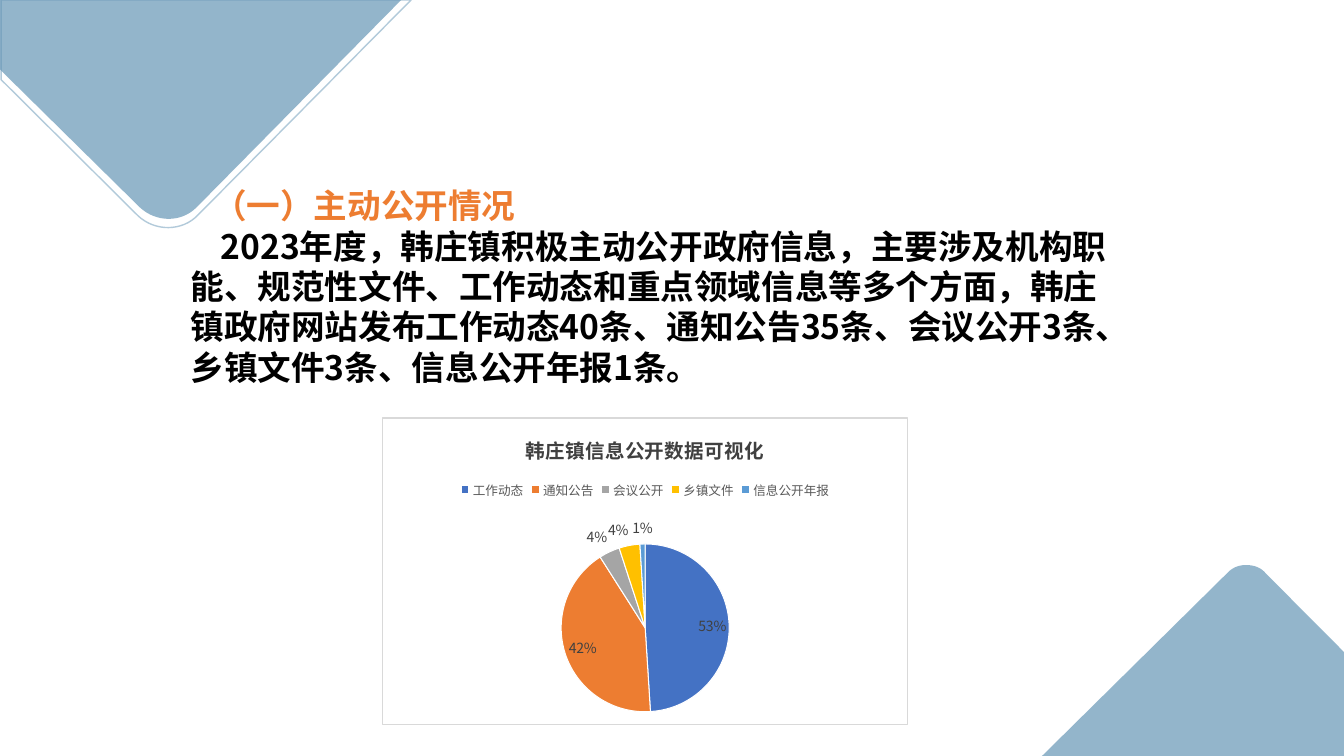
from lxml import etree
from pptx import Presentation
from pptx.chart.data import CategoryChartData
from pptx.dml.color import RGBColor
from pptx.enum.chart import XL_CHART_TYPE, XL_LABEL_POSITION, XL_LEGEND_POSITION
from pptx.oxml import parse_xml
from pptx.oxml.ns import nsdecls, qn
from pptx.util import Cm, Pt

PIE = XL_CHART_TYPE.PIE
BEST = XL_LABEL_POSITION.BEST_FIT
TOP = XL_LEGEND_POSITION.TOP

COLORS = {
    "blue": "6696B6", "orange": "ED7D31", "black": "000000",
    "white": "FFFFFF", "title": "404040", "legend": "595959",
    "border": "D9D9D9",
}
SLICES = [
    ("工作动态", 49, "4472C4"),
    ("通知公告", 42, "ED7D31"),
    ("会议公开", 4, "A5A5A5"),
    ("乡镇文件", 4, "FFC000"),
    ("信息公开年报", 1, "5B9BD5"),
]
TITLE = "韩庄镇信息公开数据可视化"
HEADING = "（一）主动公开情况"
BODY = (
    "2023年度，韩庄镇积极主动公开政府信息，主要涉及机构职能、规范性文件、"
    "工作动态和重点领域信息等多个方面，韩庄镇政府网站发布工作动态40条、"
    "通知公告35条、会议公开3条、乡镇文件3条、信息公开年报1条。"
)


def curve(a, b, c, d, steps=16):
    points = []
    for i in range(steps + 1):
        t = i / steps
        u = 1 - t
        points.append(tuple(
            u**3 * p + 3 * u * u * t * q + 3 * u * t * t * r + t**3 * s
            for p, q, r, s in zip(a, b, c, d)
        ))
    return points


class Page:
    font = "Noto Sans CJK SC"

    def __init__(self, slide):
        self.slide = slide

    def color(self, name):
        return RGBColor.from_string(COLORS[name])

    def style(self, font, size, name, bold=False):
        font.size = Pt(size)
        font.bold = bold
        font.name = self.font
        font.color.rgb = self.color(name)

    def east(self, run):
        props = run._r.get_or_add_rPr()
        latin = props.find(qn("a:latin"))
        east = etree.Element(qn("a:ea"), typeface=self.font)
        latin.addnext(east)

    def paint(self, fill, name, alpha):
        fill.solid()
        fill.fore_color.rgb = self.color(name)
        tint = fill._xPr.find(qn("a:solidFill"))[0]
        etree.SubElement(tint, qn("a:alpha"), val=str(alpha * 1000))

    def outline(self, points, alpha, filled=True):
        spots = [(Cm(x), Cm(y)) for x, y in points]
        pen = self.slide.shapes.build_freeform(*spots[0])
        pen.add_line_segments(spots[1:], close=True)
        shape = pen.convert_to_shape()
        shape.shadow.inherit = False
        if filled:
            self.paint(shape.fill, "blue", alpha)
            shape.line.fill.background()
        else:
            shape.fill.background()
            shape.line.width = Pt(1)
            self.paint(shape.line.fill, "blue", alpha)

    def text(self, box, lines):
        frame = self.slide.shapes.add_textbox(*map(Cm, box)).text_frame
        frame.word_wrap = True
        frame.margin_top = Cm(0.2)
        frame.text = "\n".join(line for line, _, _ in lines)
        for para, (_, name, indent) in zip(frame.paragraphs, lines):
            para.line_spacing = Pt(28.8)
            para._p.get_or_add_pPr().set("indent", str(Cm(indent)))
            for run in para.runs:
                self.style(run.font, 24, name, True)
                self.east(run)

    def pie(self, box, title, slices, first):
        data = CategoryChartData()
        data.categories = [name for name, _, _ in slices]
        data.add_series(title, [value for _, value, _ in slices])
        chart = self.slide.shapes.add_chart(PIE, *map(Cm, box), data).chart
        self.style(chart.font, 10, "black")
        self.frame(chart)

        chart.has_title = True
        head = chart.chart_title.text_frame
        head.text = title
        run = head.paragraphs[0].runs[0]
        self.style(run.font, 14, "title", True)
        self.east(run)

        chart.has_legend = True
        chart.legend.position = TOP
        chart.legend.include_in_layout = False
        self.style(chart.legend.font, 9, "legend")

        plot = chart.plots[0]
        plot.vary_by_categories = True
        series = plot.series[0]
        for i, (_, _, tone) in enumerate(slices):
            form = series.points[i].format
            form.fill.solid()
            form.fill.fore_color.rgb = RGBColor.from_string(tone)
            form.line.color.rgb = self.color("white")
            form.line.width = Pt(0.75)

        labels = series.data_labels
        labels.show_percentage = True
        labels.show_value = False
        labels.number_format = "0%"
        labels.number_format_is_linked = False
        labels.position = BEST
        self.style(labels.font, 10, "title")
        label = series.points[0].data_label
        label.text_frame.text = first
        self.style(label.text_frame.paragraphs[0].runs[0].font, 10, "title")
        label.position = BEST

    def frame(self, chart):
        space = chart._chartSpace
        props = parse_xml(
            f'<c:spPr {nsdecls("c", "a")}>'
            f'<a:solidFill><a:srgbClr val="{COLORS["white"]}"/></a:solidFill>'
            f'<a:ln w="{Pt(0.75)}"><a:solidFill>'
            f'<a:srgbClr val="{COLORS["border"]}"/></a:solidFill></a:ln></c:spPr>'
        )
        space.find(qn("c:chart")).addnext(props)
        area = space.find(".//" + qn("c:plotArea"))
        for old in area.findall(qn("c:layout")):
            area.remove(old)
        layout = etree.Element(qn("c:layout"))
        manual = etree.SubElement(layout, qn("c:manualLayout"))
        parts = [
            ("layoutTarget", "inner"), ("xMode", "edge"), ("yMode", "edge"),
            ("x", "0.34"), ("y", "0.41"), ("w", "0.32"), ("h", "0.55"),
        ]
        for tag, value in parts:
            etree.SubElement(manual, qn("c:" + tag), val=value)
        area.insert(0, layout)


def main():
    deck = Presentation()
    deck.slide_width = Cm(33.87)
    deck.slide_height = Cm(19.05)
    page = Page(deck.slides.add_slide(deck.slide_layouts[6]))

    peak = curve((30.94, 14.43), (31.06, 14.3), (31.24, 14.23), (31.42, 14.24))
    peak += curve((31.42, 14.24), (31.6, 14.24), (31.78, 14.3), (31.9, 14.45))[1:]
    page.outline(peak + [(33.87, 16.43), (33.87, 19.05), (26.26, 19.05)], 70)

    tip = curve((3.53, 5.23), (3.94, 5.61), (4.57, 5.61), (4.95, 5.23))
    page.outline([(10.11, 0), (0, 0), (0, 1.75)] + tip, 70)

    rim = curve((3.48, 5.44), (3.91, 5.84), (4.6, 5.84), (5, 5.41))
    page.outline([(10.36, 0), (0.03, 0), (0.03, 2.01)] + rim, 50, False)

    page.text((4.55, 4.47, 23.72, 14.25), [
        (HEADING, "orange", 0.57),
        (BODY, "black", 0.76),
    ])
    page.pie((9.63, 10.52, 13.26, 7.75), TITLE, SLICES, "53%")
    deck.save("out.pptx")


if __name__ == "__main__":
    main()
